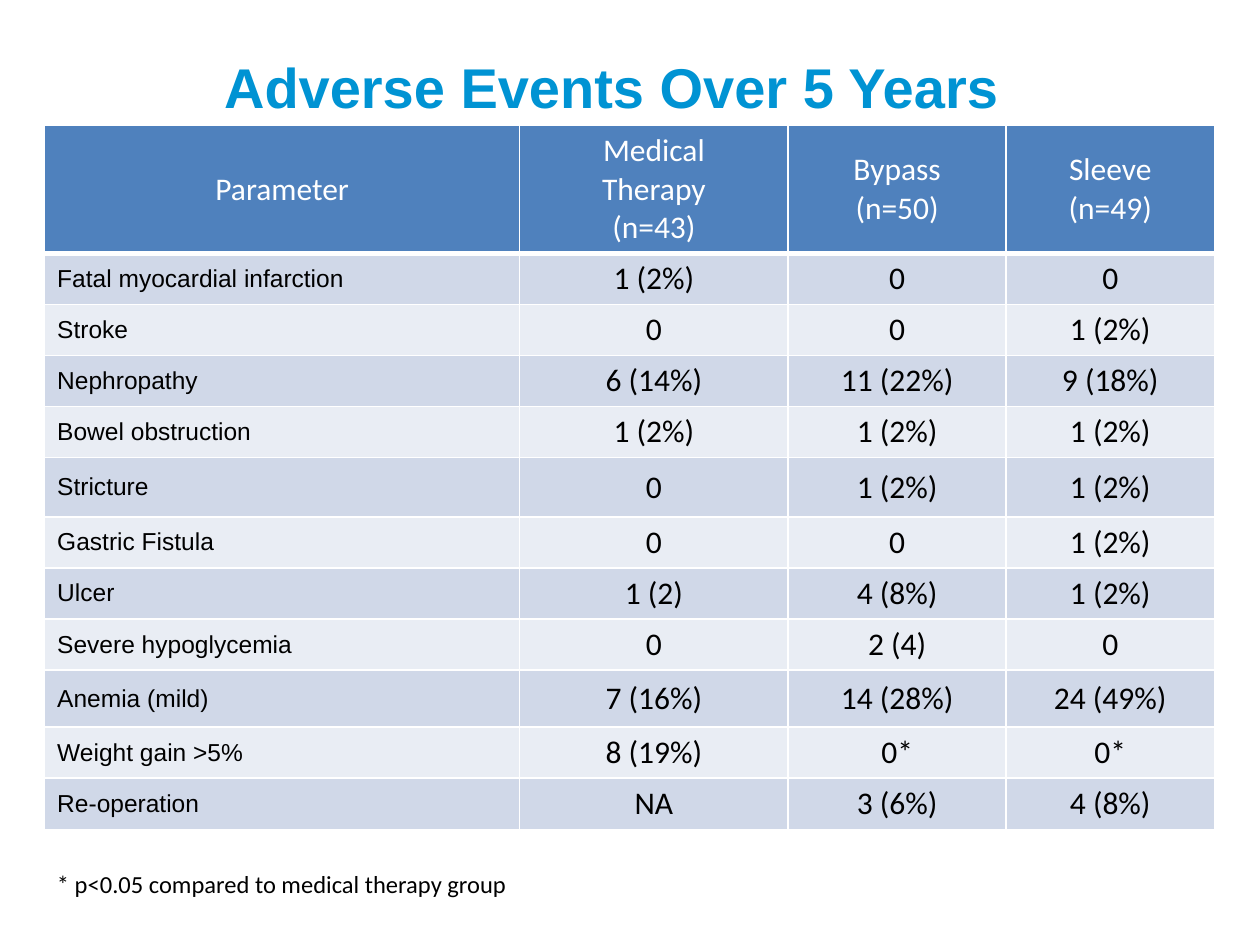
"""Build the slide that tabulates adverse events over five years."""
from dataclasses import dataclass

import lxml.etree
import pptx
import pptx.dml.color
import pptx.enum.text
import pptx.oxml.ns
import pptx.util

Pt = pptx.util.Pt
ALIGN = pptx.enum.text.PP_ALIGN
MIDDLE = pptx.enum.text.MSO_ANCHOR.MIDDLE
COLORS = {
    "title": "0093D3",
    "header": "4F81BD",
    "odd": "D0D8E8",
    "even": "E9EDF4",
    "white": "FFFFFF",
    "black": "000000",
}


@dataclass(frozen=True)
class TextStyle:
    font: str
    size: int
    color: str
    align: ALIGN
    bold: bool = False


@dataclass(frozen=True)
class Event:
    name: str
    medical: str
    bypass: str
    sleeve: str
    height: float = 29.2


TITLE = TextStyle("Arial", 32, "title", ALIGN.CENTER, True)
HEADER = TextStyle("Calibri", 18, "white", ALIGN.CENTER)
LABEL = TextStyle("Arial", 14, "black", ALIGN.LEFT)
VALUE = TextStyle("Calibri", 18, "black", ALIGN.CENTER)
NOTE = TextStyle("Calibri", 14, "black", ALIGN.LEFT)

LEFT = 25.5
COLUMN_WIDTHS = (271.5, 153.4, 124.6, 119)
HEADER_HEIGHT = 72.6
HEADINGS = ("Parameter", "Medical\nTherapy\v(n=43)", "Bypass\n(n=50)", "Sleeve\n(n=49)")
EVENTS = (
    Event("Fatal myocardial infarction", "1 (2%)", "0", "0"),
    Event("Stroke", "0", "0", "1 (2%)"),
    Event("Nephropathy", "6 (14%)", "11 (22%)", "9 (18%)"),
    Event("Bowel obstruction", "1 (2%)", "1 (2%)", "1 (2%)"),
    Event("Stricture", "0", "1 (2%)", "1 (2%)", 33.8),
    Event("Gastric Fistula", "0", "0", "1 (2%)"),
    Event("Ulcer", "1 (2)", "4 (8%)", "1 (2%)"),
    Event("Severe hypoglycemia", "0", "2 (4)", "0"),
    Event("Anemia (mild)", "7 (16%)", "14 (28%)", "24 (49%)", 32.6),
    Event("Weight gain >5%", "8 (19%)", "0*", "0*"),
    Event("Re-operation", "NA", "3 (6%)", "4 (8%)"),
)


def rgb(name: str) -> pptx.dml.color.RGBColor:
    return pptx.dml.color.RGBColor.from_string(COLORS[name])


def write(tf, text: str, style: TextStyle) -> None:
    tf.text = text
    for p in tf.paragraphs:
        p.alignment = style.align
        p.font.name = style.font
        p.font.size = Pt(style.size)
        p.font.bold = style.bold
        p.font.color.rgb = rgb(style.color)


def add_borders(cell, bottom: float) -> None:
    qn = pptx.oxml.ns.qn
    tc_pr = cell._tc.get_or_add_tcPr()
    widths = {"a:lnL": 1, "a:lnR": 1, "a:lnT": 1, "a:lnB": bottom}
    for i, (tag, width) in enumerate(widths.items()):
        ln = lxml.etree.Element(qn(tag), w=str(Pt(width)))
        fill = lxml.etree.SubElement(ln, qn("a:solidFill"))
        lxml.etree.SubElement(fill, qn("a:srgbClr"), val=COLORS["white"])
        tc_pr.insert(i, ln)


def format_cell(cell, text: str, style: TextStyle, fill: str, bottom: float = 1) -> None:
    write(cell.text_frame, text, style)
    cell.vertical_anchor = MIDDLE
    cell.fill.solid()
    cell.fill.fore_color.rgb = rgb(fill)
    add_borders(cell, bottom)


def add_title(slide) -> None:
    sp = slide.shapes.title
    sp.left, sp.top, sp.width, sp.height = Pt(LEFT), Pt(15), Pt(648), Pt(68)
    sp.text_frame.vertical_anchor = MIDDLE
    write(sp.text_frame, "Adverse Events Over 5 Years", TITLE)


def add_event_table(slide) -> None:
    heights = [HEADER_HEIGHT] + [event.height for event in EVENTS]
    table = slide.shapes.add_table(
        len(heights), len(COLUMN_WIDTHS), Pt(LEFT), Pt(71.6),
        Pt(sum(COLUMN_WIDTHS)), Pt(sum(heights)),
    ).table
    for column, width in zip(table.columns, COLUMN_WIDTHS):
        column.width = Pt(width)
    for row, height in zip(table.rows, heights):
        row.height = Pt(height)
    for c, heading in enumerate(HEADINGS):
        format_cell(table.cell(0, c), heading, HEADER, "header", 3)
    for r, event in enumerate(EVENTS, 1):
        fill = "odd" if r % 2 else "even"
        format_cell(table.cell(r, 0), event.name, LABEL, fill)
        for c, value in enumerate((event.medical, event.bypass, event.sleeve), 1):
            format_cell(table.cell(r, c), value, VALUE, fill)


def add_note(slide) -> None:
    sp = slide.shapes.add_textbox(Pt(LEFT), Pt(493.2), Pt(556), Pt(24.5))
    tf = sp.text_frame
    tf.word_wrap = True
    tf.auto_size = pptx.enum.text.MSO_AUTO_SIZE.SHAPE_TO_FIT_TEXT
    write(tf, "* p<0.05 compared to medical therapy group", NOTE)


def main() -> None:
    prs = pptx.Presentation()
    prs.slide_width, prs.slide_height = Pt(720), Pt(540)
    slide = prs.slides.add_slide(prs.slide_layouts[5])
    add_title(slide)
    add_event_table(slide)
    add_note(slide)
    prs.save("out.pptx")


if __name__ == "__main__":
    main()
